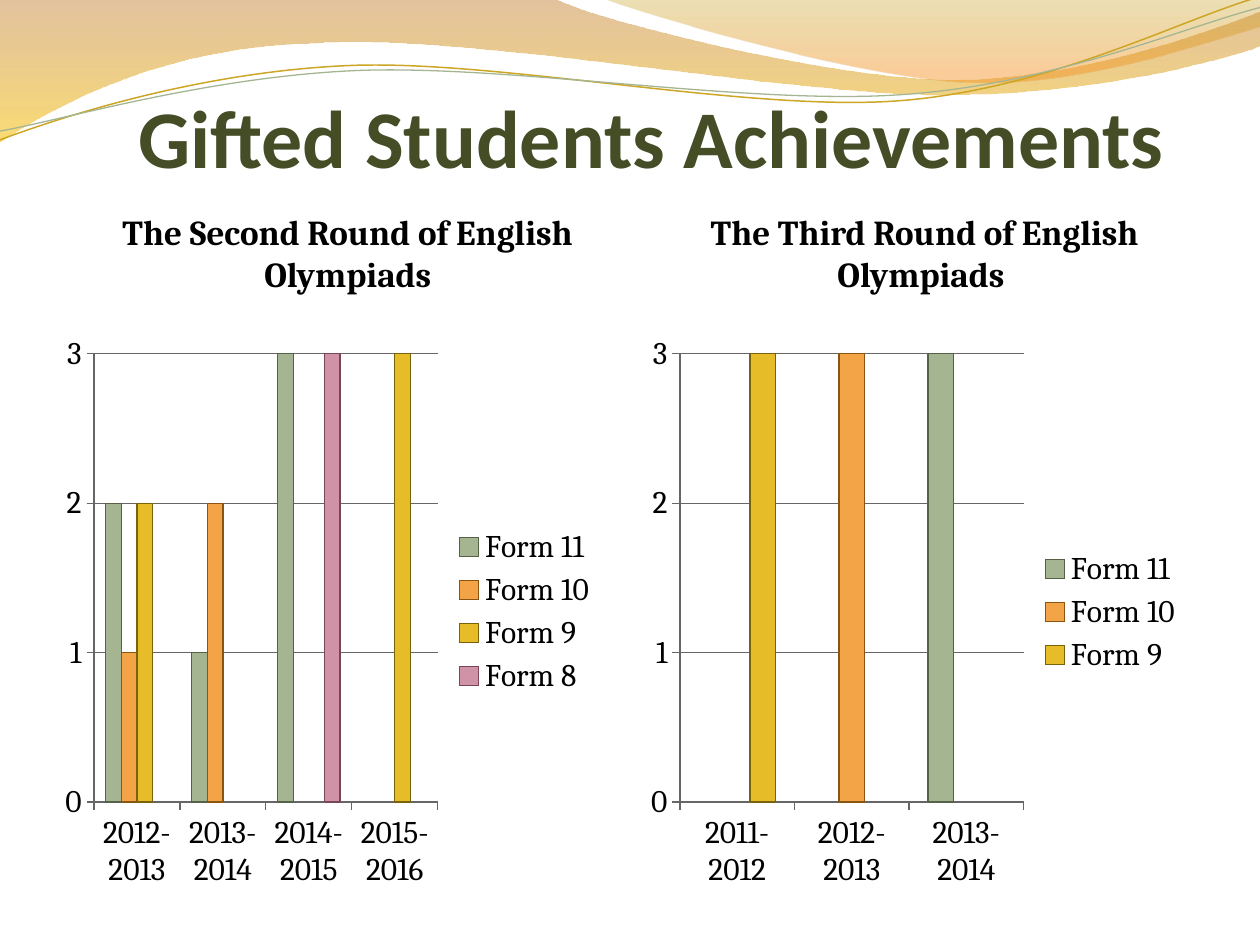
from math import cos, radians, sin

from lxml.etree import SubElement
from pptx import Presentation
from pptx.chart.data import CategoryChartData
from pptx.dml.color import RGBColor
from pptx.enum.chart import XL_CHART_TYPE, XL_LEGEND_POSITION, XL_TICK_MARK
from pptx.enum.text import MSO_ANCHOR, PP_ALIGN
from pptx.oxml.ns import qn
from pptx.util import Inches, Pt

BLACK = RGBColor(0, 0, 0)
GRAY = RGBColor(0x66, 0x66, 0x66)
OLIVE = RGBColor(0x44, 0x4D, 0x26)
BROWN = RGBColor(0xC0, 0x7A, 0x28)
YELLOW = RGBColor(0xF7, 0xBF, 0x00)
KHAKI = RGBColor(0xC0, 0x97, 0x09)
AMBER = RGBColor(0xF5, 0x93, 0x20)
GOLD = RGBColor(0xCC, 0xA6, 0x24)
SAGE = RGBColor(0xA5, 0xB5, 0x92)

# Bar fill and outline for each form
FORMS = {
    "Form 11": (SAGE, RGBColor(0x56, 0x62, 0x48)),
    "Form 10": (RGBColor(0xF3, 0xA4, 0x47), RGBColor(0x8A, 0x55, 0x10)),
    "Form 9": (RGBColor(0xE7, 0xBC, 0x29), RGBColor(0x7A, 0x62, 0x0A)),
    "Form 8": (RGBColor(0xD0, 0x92, 0xA7), RGBColor(0x7A, 0x45, 0x58)),
}

TITLE = "Gifted Students Achievements"
# Heading, its box, chart left, years, values by form
ROUNDS = [
    ("The Second Round of English Olympiads", (0.55, 1.64, 4.42, 0.72), 0.43,
     ["2012-2013", "2013-2014", "2014-2015", "2015-2016"],
     {"Form 11": [2, 1, 3, None], "Form 10": [1, 2, None, None],
      "Form 9": [2, None, None, 3], "Form 8": [None, None, 3, None]}),
    ("The Third Round of English Olympiads ", (5.09, 1.61, 4.5, 0.79), 5.08,
     ["2011-2012", "2012-2013", "2013-2014"],
     {"Form 11": [None, None, 3], "Form 10": [None, 3, None],
      "Form 9": [3, None, None]}),
]

# Outlines: two numbers are a line's end, six are a curve
# Bands: outline, gradient stops (place, colour, opacity in %)
BANDS = [
    ([(0, 0), (4.4, -0.01), (4.76, 0.17, 6.64, 0.63, 7.58, 0.63),
      (8.53, 0.63, 9.58, 0.26, 10, 0.09), (10.01, 0.36),
      (9.83, 0.44, 8.7, 0.76, 7.46, 0.75),
      (6.22, 0.75, 3.82, 0.28, 2.57, 0.34),
      (1.29, 0.36, 0.46, 0.83, -0.01, 1.13), (0, 0)],
     [(0, BROWN, 45), (1, YELLOW, 55)]),
    ([(4.79, -0.01), (5.09, 0.11, 6.82, 0.62, 7.69, 0.65),
      (8.56, 0.69, 9.61, 0.32, 10, 0.21), (10, 0), (4.79, -0.01)],
     [(0, KHAKI, 30), (0.8, AMBER, 45)]),
]
# Waves: outline, colour, width
WAVES = [
    ([(0, 1.11), (0.48, 0.93, 1.58, 0.57, 2.77, 0.52),
      (3.95, 0.47, 5.93, 0.89, 7.13, 0.8),
      (8.33, 0.71, 9.38, 0.15, 9.98, -0.02)], GOLD, 0.85),
    ([(0, 1.04), (0.47, 0.96, 1.64, 0.61, 2.83, 0.56),
      (4.03, 0.51, 5.97, 0.84, 7.17, 0.75),
      (8.36, 0.67, 9.41, 0.21, 10, 0.06)], SAGE, 0.75),
]
TILT = 2.7
MID = (4.99, 0.58)

deck = Presentation()
deck.slide_width, deck.slide_height = Inches(10), Inches(7.5)
slide = deck.slides.add_slide(deck.slide_layouts[6])
shapes = slide.shapes


def turn(x, y, angle):
    """Turn a point about the middle of the waves."""
    c, s = cos(radians(angle)), sin(radians(angle))
    x, y = x - MID[0], y - MID[1]
    return MID[0] + x * c - y * s, MID[1] + x * s + y * c


def draw(parts, close, tilt=0):
    """Draw an outline, joining each three points of a curve into a Bezier."""
    spots = [turn(*part[i:i + 2], tilt)
             for part in parts for i in range(0, len(part), 2)]
    spots = [(Inches(x), Inches(y)) for x, y in spots]
    pen = shapes.build_freeform(*spots[0])
    pen.add_line_segments(spots[1:], close=close)
    shape = pen.convert_to_shape()
    shape.rotation = -tilt
    shape.shadow.inherit = False
    lines = iter(list(shape.element.iter(qn("a:lnTo"))))
    for part in parts[1:]:
        line = next(lines)
        if len(part) == 6:
            curve = line.makeelement(qn("a:cubicBezTo"))
            line.addprevious(curve)
            for old in (line, next(lines), next(lines)):
                curve.append(old[0])
                old.getparent().remove(old)
    return shape


def write(text, box, size, font, color, anchor, pads):
    frame = shapes.add_textbox(*map(Inches, box)).text_frame
    frame.word_wrap = True
    frame.vertical_anchor = anchor
    (frame.margin_left, frame.margin_top,
     frame.margin_right, frame.margin_bottom) = map(Inches, pads)
    para = frame.paragraphs[0]
    para.text = text
    para.alignment = PP_ALIGN.CENTER
    para.font.size, para.font.name, para.font.bold = Pt(size), font, True
    para.font.color.rgb = color


def plot(left, years, forms):
    data = CategoryChartData()
    data.categories = years
    for name, values in forms.items():
        data.add_series(name, values)
    chart = shapes.add_chart(XL_CHART_TYPE.COLUMN_CLUSTERED, Inches(left),
                             Inches(2.57), Inches(4.41), Inches(4.57), data).chart
    chart.has_title = False
    chart.font.size, chart.font.name = Pt(18), "Cambria"
    chart.font.color.rgb = BLACK
    chart.has_legend = True
    chart.legend.position = XL_LEGEND_POSITION.RIGHT
    chart.legend.include_in_layout = False

    # Axes
    scale = chart.value_axis
    scale.minimum_scale, scale.maximum_scale, scale.major_unit = 0, 3, 1
    scale.has_major_gridlines = True
    for axis in (scale, chart.category_axis):
        axis.major_tick_mark = XL_TICK_MARK.OUTSIDE
    for item in (scale, chart.category_axis, scale.major_gridlines):
        item.format.line.color.rgb = GRAY
        item.format.line.width = Pt(0.75)

    # Bars
    bars = chart.plots[0]
    bars.vary_by_categories = False
    bars.gap_width, bars.overlap = 150, 0
    for series in bars.series:
        fill, edge = FORMS[series.name]
        series.invert_if_negative = False
        series.format.fill.solid()
        series.format.fill.fore_color.rgb = fill
        series.format.line.color.rgb = edge
        series.format.line.width = Pt(0.75)


# Shaded bands at the top
for parts, stops in BANDS:
    band = draw(parts, True)
    band.line.fill.background()
    band.fill.gradient()
    band.fill.gradient_angle = 270
    for stop, (place, color, _) in zip(band.fill.gradient_stops, stops):
        stop.position = place
        stop.color.rgb = color
    tints = band.element.iter(qn("a:srgbClr"))
    for tint, (_, _, share) in zip(tints, stops):
        SubElement(tint, qn("a:alpha")).set("val", str(share * 1000))

# Thin waves
for parts, color, width in WAVES:
    wave = draw(parts, False, TILT)
    wave.fill.background()
    wave.line.color.rgb = color
    wave.line.width = Pt(width)

# Headings, title and charts
for head, box, *_ in ROUNDS:
    write(head, box, 20, "Cambria", BLACK, MSO_ANCHOR.MIDDLE, (0.05, 0, 0.05, 0))
write(TITLE, (0.67, 0.6, 9, 0.87), 46.8, "Calibri", OLIVE,
      MSO_ANCHOR.BOTTOM, (0, 0.05, 0, 0))
for _, _, left, years, forms in ROUNDS:
    plot(left, years, forms)

deck.save("out.pptx")
